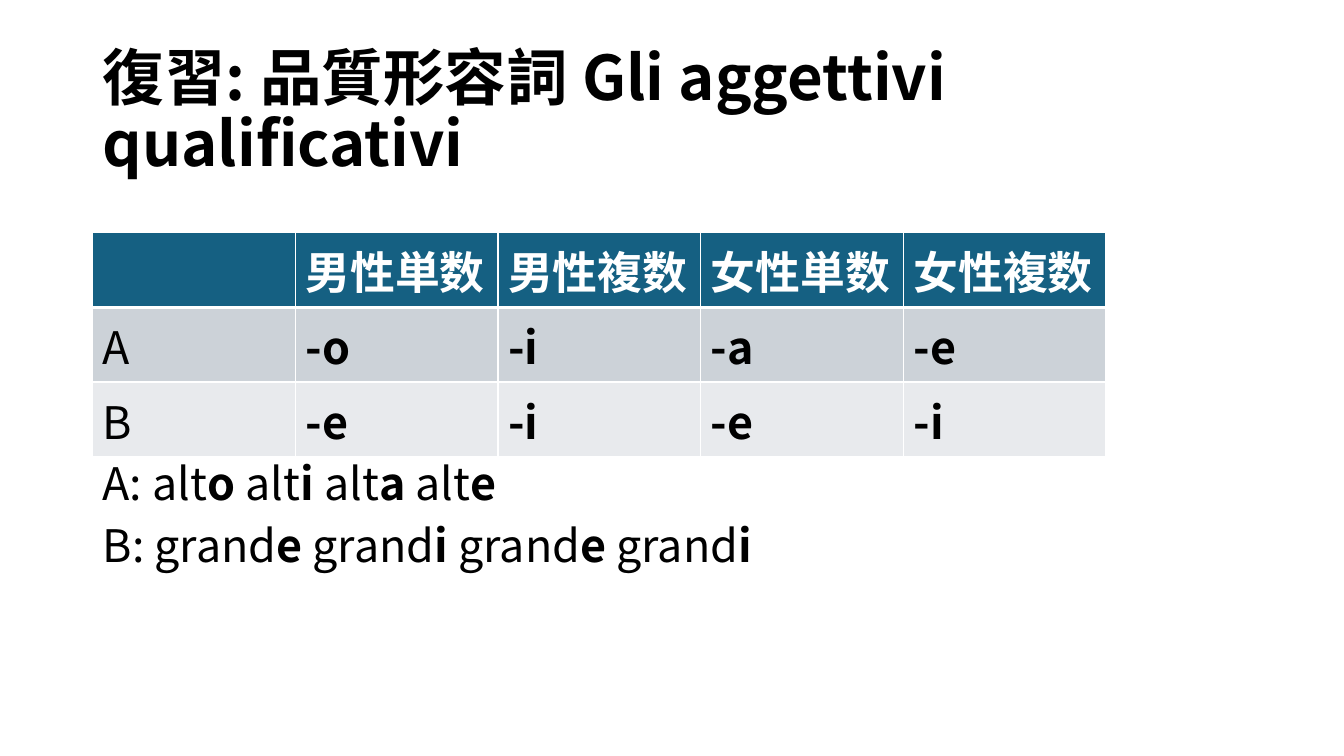
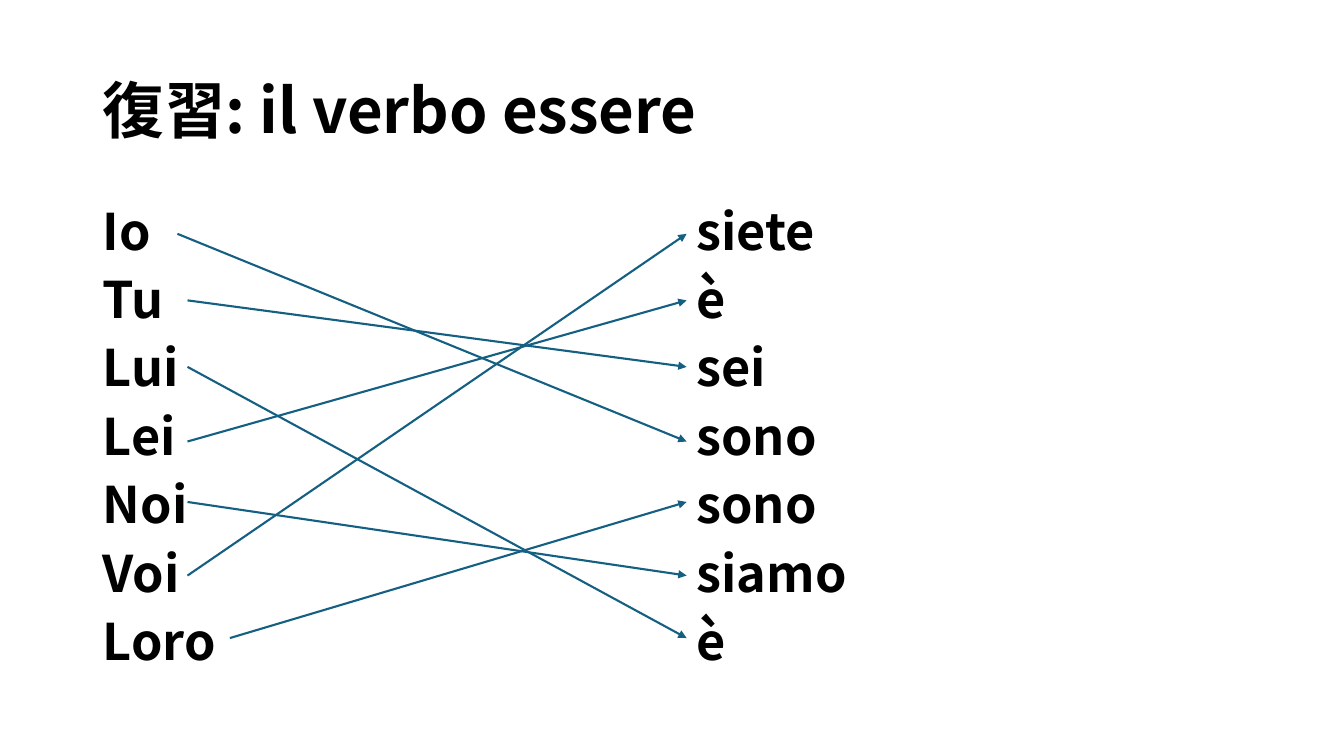
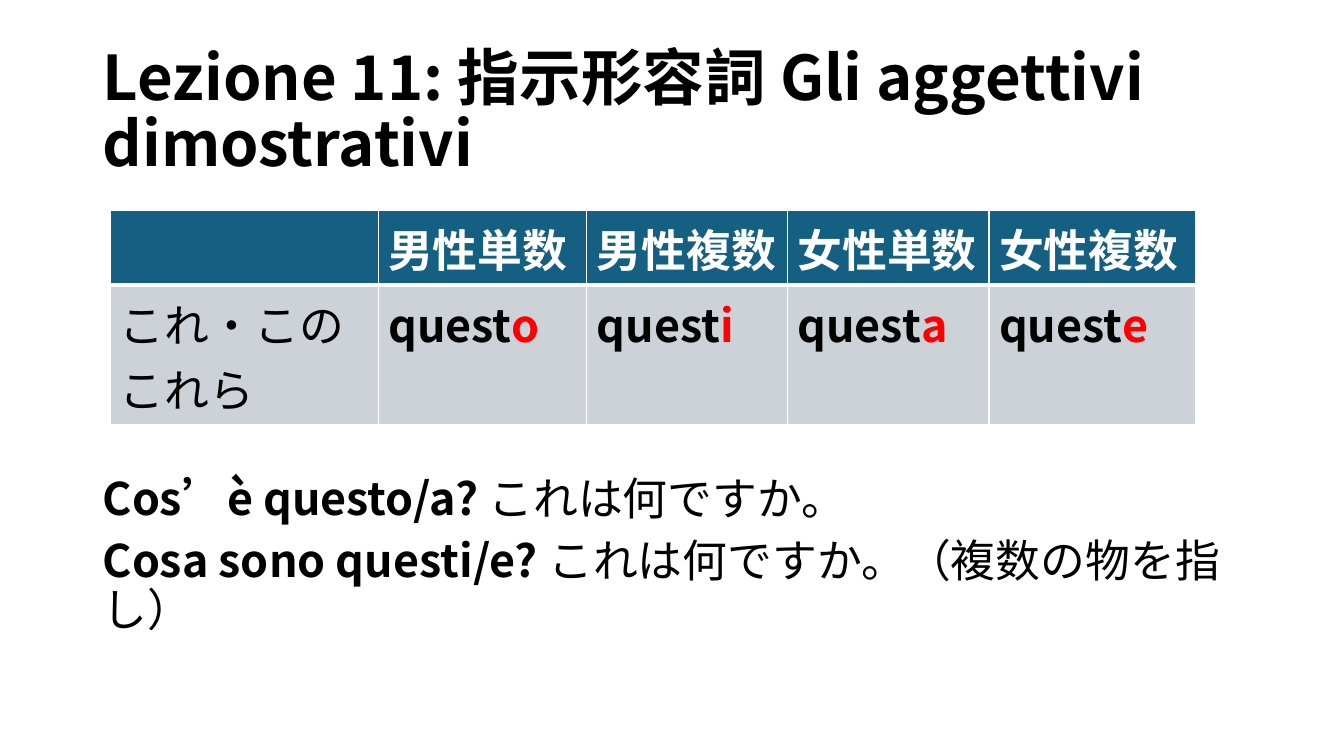
"""Italian grammar lesson: adjectives, the verb essere and demonstratives."""
from lxml.etree import SubElement
from pptx import Presentation
from pptx.dml.color import RGBColor
from pptx.enum.shapes import MSO_CONNECTOR
from pptx.enum.text import MSO_ANCHOR
from pptx.oxml.ns import qn
from pptx.util import Inches, Pt

FONT = "Noto Sans CJK JP"
FIRST_CJK = "\u3000"
BLACK, WHITE, RED, TEAL = "000000", "FFFFFF", "FF0000", "156082"
BANDS = ["CCD2D8", "E8EAED"]
PLAIN, BOLD = (BLACK, False), (BLACK, True)
HEADING, ENDING = (WHITE, True), (RED, True)
LEFT, WIDTH = 0.92, 11.5
SPACING = 0.9
ROW, LINE = 0.74, 0.64

GENDERS = ["", "男性単数", "男性複数", "女性単数", "女性複数"]

QUALIFYING = {
    "title": "復習: 品質形容詞 Gli aggettivi qualificativi",
    "rows": [GENDERS, ["A", "-o", "-i", "-a", "-e"], ["B", "-e", "-i", "-e", "-i"]],
    "place": (LEFT, 2.31),
    "columns": [2.01] * 5,
    "examples": ["A: alt*o* alt*i* alt*a* alt*e*",
                 "B: grand*e* grand*i* grand*e* grand*i*"],
    "examples_box": (LEFT, 4.53, WIDTH, 1.4),
}
DEMONSTRATIVE = {
    "title": "Lezione 11: 指示形容詞 Gli aggettivi dimostrativi",
    "rows": [GENDERS, ["これ・この\nこれら", "quest*o*", "quest*i*", "quest*a*", "quest*e*"]],
    "place": (1.09, 2.09),
    "columns": [2.66, 2.07, 1.99, 2.0, 2.05],
    "examples": ["*Cos’è questo/a? *これは何ですか。",
                 "*Cosa sono questi/e? *これは何ですか。（複数の物を指し）"],
    "examples_box": (LEFT, 4.68, 12.03, 2),
}

ESSERE_TITLE = "復習: il verbo essere"
VERBS = ["siete", "è", "sei", "sono", "sono", "siamo", "è"]
MATCHES = [("Io", 3, 1.76), ("Tu", 2, 1.86), ("Lui", 6, 1.86), ("Lei", 1, 1.86),
           ("Noi", 5, 1.86), ("Voi", 0, 1.86), ("Loro", 4, 2.28)]
ARROW_LEVELS = [2.32, 2.98, 3.64, 4.38, 4.98, 5.71, 6.33]
VERB_LEFT = 6.81


def color(value):
    return RGBColor.from_string(value)


def write(paragraph, text, size, plain, marked=BOLD):
    for position, piece in enumerate(text.split("*")):
        if not piece:
            continue
        run = paragraph.add_run()
        run.text = piece
        ink, bold = marked if position % 2 else plain
        font = run.font
        font.name, font.size, font.bold = FONT, Pt(size), bold
        font.color.rgb = color(ink)
        if max(piece) > FIRST_CJK:
            SubElement(run._r.get_or_add_rPr(), qn("a:ea"), typeface=FONT)


def paragraphs(frame, count):
    return [frame.paragraphs[0]] + [frame.add_paragraph() for _ in range(count - 1)]


def add_text(slide, box, lines, size, style, anchor=MSO_ANCHOR.TOP):
    frame = slide.shapes.add_textbox(*map(Inches, box)).text_frame
    frame.word_wrap = True
    frame.vertical_anchor = anchor
    for index, paragraph in enumerate(paragraphs(frame, len(lines))):
        paragraph.line_spacing = SPACING
        paragraph.space_before = Pt(10 if index else 0)
        write(paragraph, lines[index], size, style)


def add_slide(deck, title):
    slide = deck.slides.add_slide(deck.slide_layouts[6])
    add_text(slide, (LEFT, 0.4, WIDTH, 1.45), [title], 44, BOLD, MSO_ANCHOR.MIDDLE)
    return slide


def add_borders(cell, row):
    widths = {"L": 1, "R": 1, "T": 3 if row == 1 else 1, "B": 3 if row == 0 else 1}
    for side, width in widths.items():
        edge = SubElement(cell._tc.get_or_add_tcPr(), qn(f"a:ln{side}"), w=str(Pt(width)))
        SubElement(SubElement(edge, qn("a:solidFill")), qn("a:srgbClr"), val=WHITE)


def add_grid(slide, rows, place, columns):
    heights = [ROW + LINE * max(text.count("\n") for text in row) for row in rows]
    table = slide.shapes.add_table(
        len(rows), len(columns), *map(Inches, (*place, sum(columns), sum(heights)))).table
    for column, width in zip(table.columns, columns):
        column.width = Inches(width)
    for r, row in enumerate(rows):
        table.rows[r].height = Inches(heights[r])
        for c, text in enumerate(row):
            cell = table.cell(r, c)
            add_borders(cell, r)
            cell.fill.solid()
            cell.fill.fore_color.rgb = color(BANDS[r - 1] if r else TEAL)
            style = HEADING if r == 0 else BOLD if c else PLAIN
            lines = text.split("\n")
            for paragraph, line in zip(paragraphs(cell.text_frame, len(lines)), lines):
                write(paragraph, line, 32, style, ENDING)


def add_arrow(slide, start, end):
    arrow = slide.shapes.add_connector(MSO_CONNECTOR.STRAIGHT, *map(Inches, start + end))
    arrow.line.color.rgb = color(TEAL)
    arrow.line.width = Pt(1.5)
    SubElement(arrow.line._get_or_add_ln(), qn("a:tailEnd"), type="triangle")
    SubElement(arrow._element.spPr, qn("a:effectLst"))


def adjective_slide(deck, lesson):
    slide = add_slide(deck, lesson["title"])
    add_text(slide, lesson["examples_box"], lesson["examples"], 32, PLAIN)
    add_grid(slide, lesson["rows"], lesson["place"], lesson["columns"])


def essere_slide(deck):
    slide = add_slide(deck, ESSERE_TITLE)
    pronouns = [pronoun for pronoun, _, _ in MATCHES]
    for left, words in ((LEFT, pronouns), (VERB_LEFT, VERBS)):
        add_text(slide, (left, 2, 6.02, 4.76), words, 36, BOLD)
    for level, (_, verb, start) in zip(ARROW_LEVELS, MATCHES):
        add_arrow(slide, (start, level), (VERB_LEFT, ARROW_LEVELS[verb]))


def main():
    deck = Presentation()
    deck.slide_width, deck.slide_height = Inches(13.33), Inches(7.5)
    adjective_slide(deck, QUALIFYING)
    essere_slide(deck)
    adjective_slide(deck, DEMONSTRATIVE)
    deck.save("out.pptx")


if __name__ == "__main__":
    main()
